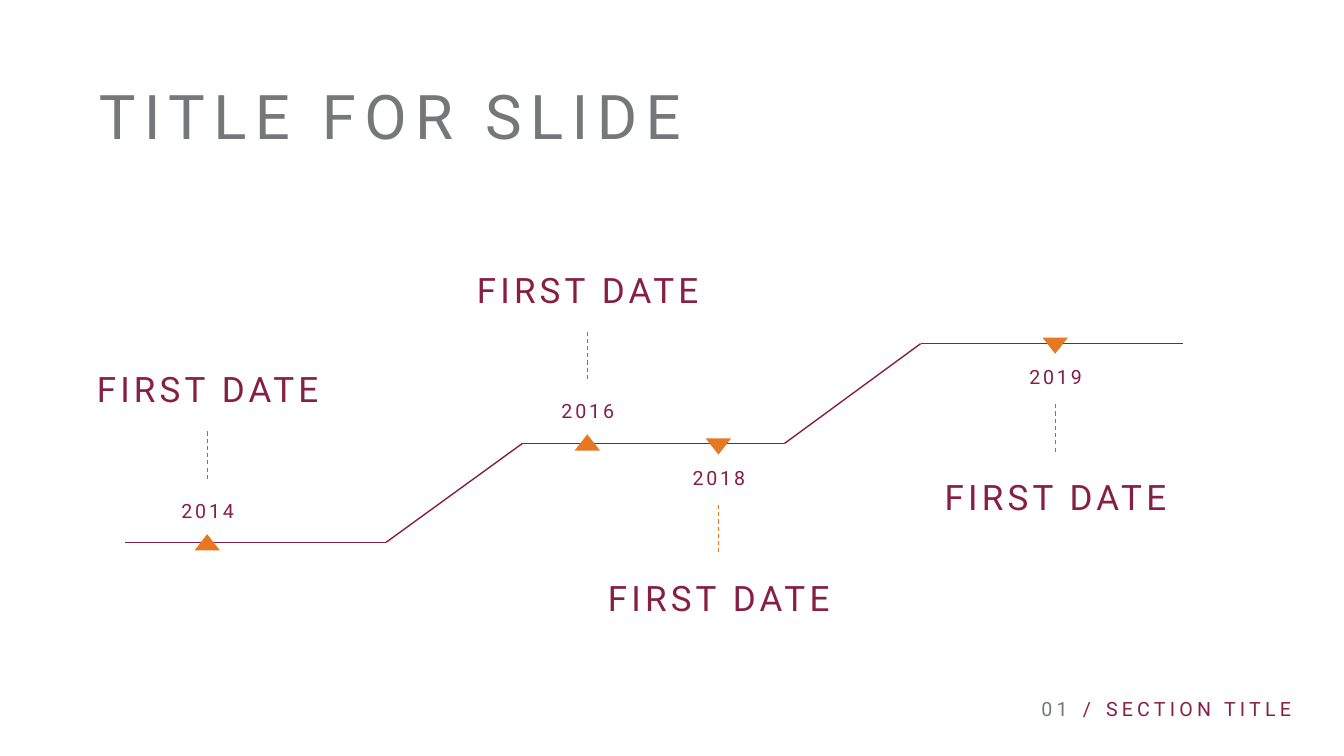
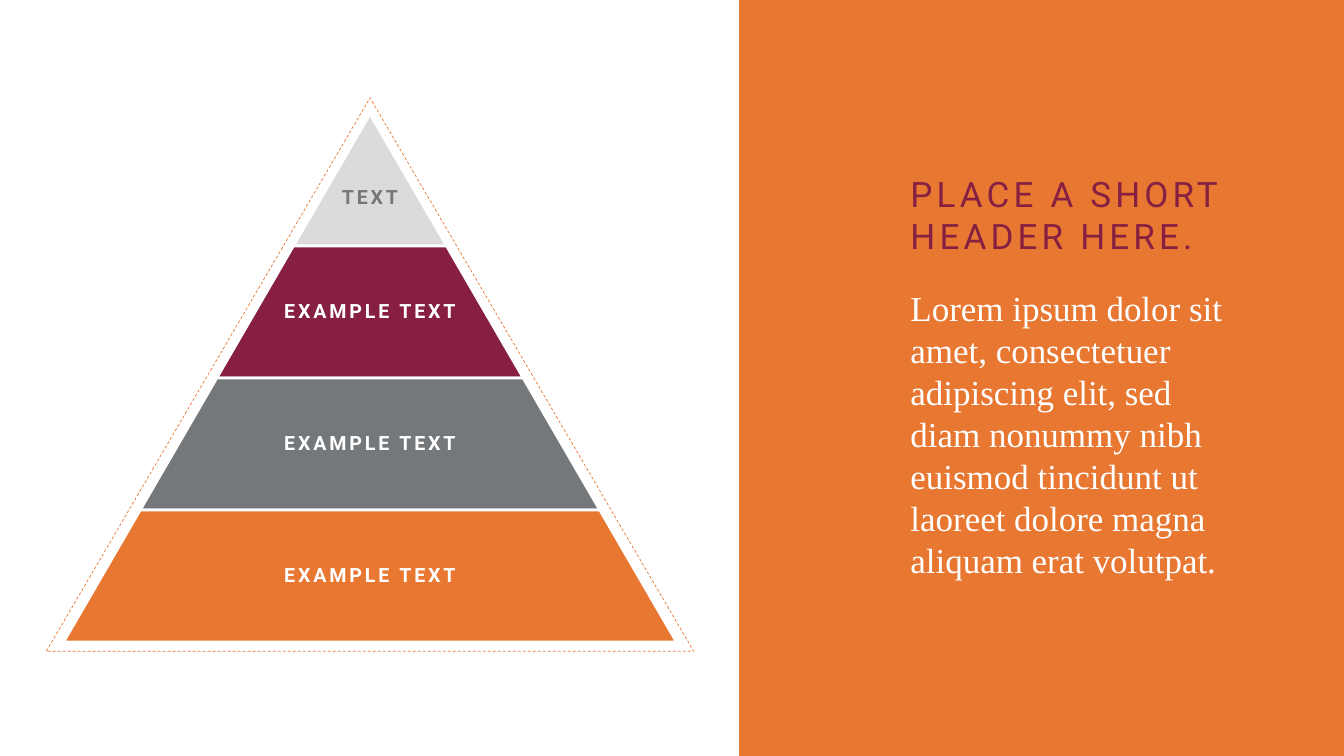
import dataclasses
import itertools

import pptx
import pptx.dml.color
import pptx.enum.dml
import pptx.enum.shapes
import pptx.enum.text
import pptx.oxml.ns
import pptx.util
from lxml import etree

Inches = pptx.util.Inches
Shape = pptx.enum.shapes.MSO_SHAPE
Align = pptx.enum.text.PP_ALIGN
Anchor = pptx.enum.text.MSO_ANCHOR


@dataclasses.dataclass(frozen=True)
class Theme:
    maroon: str = "861F41"
    grey: str = "75787B"
    marker: str = "E87722"
    orange: str = "E87731"
    pale: str = "DBDBDB"
    white: str = "FFFFFF"
    sans: str = "Roboto"
    serif: str = "Times New Roman"
    title: int = 44
    heading: int = 25
    small: int = 14


THEME = Theme()

TIMELINE_TITLE = "TITLE FOR SLIDE"
ROUTE = [(1.24, 5.38), (3.83, 5.38), (5.18, 4.4), (7.78, 4.4), (9.13, 3.41), (11.73, 3.41)]
# year, label, marker centre, marker top, points up, dash colour
MILESTONES = [
    ("2014", "FIRST DATE", 2.06, 5.3, True, THEME.grey),
    ("2016", "FIRST DATE", 5.83, 4.31, True, THEME.grey),
    ("2018", "FIRST DATE", 7.13, 4.35, False, THEME.marker),
    ("2019", "FIRST DATE", 10.47, 3.35, False, THEME.grey),
]
# Distances from the marker top: year, dash start, label
OFFSETS = {True: (-0.4, -1.02, -1.7), False: (0.22, 0.66, 1.32)}
DASH_LENGTH = 0.5
# text, left, width, alignment, colour, letter spacing
FOOTER = [
    ("01", 9.86, 0.78, Align.RIGHT, THEME.grey, 3),
    ("/", 10.6, 0.27, Align.RIGHT, THEME.maroon, 2),
    ("SECTION TITLE", 10.92, 2.3, Align.LEFT, THEME.maroon, 3),
]

# text, fill, text colour, shift of the text down
TIERS = [
    ("TEXT", THEME.pale, THEME.grey, 0.18),
    ("EXAMPLE TEXT", THEME.maroon, THEME.white, 0),
    ("EXAMPLE TEXT", THEME.grey, THEME.white, 0),
    ("EXAMPLE TEXT", THEME.orange, THEME.white, 0),
]
PYRAMID_CENTRE, PYRAMID_TOP = 3.67, 1.13
TIER_HEIGHT, TIER_STEP = 1.31, 1.52
PANEL_HEADER = "PLACE A SHORT HEADER HERE."
PANEL_TEXT = (
    "Lorem ipsum dolor sit amet, consectetuer adipiscing elit, sed diam nonummy nibh "
    "euismod tincidunt ut laoreet dolore magna aliquam erat volutpat."
)


def rgb(colour):
    return pptx.dml.color.RGBColor.from_string(colour)


def write(box, text, size=THEME.small, colour=THEME.maroon, font=THEME.sans, bold=False,
          spacing=0, align=Align.LEFT, anchor=Anchor.TOP, line_spacing=1.0, inset=0.05):
    frame = box.text_frame
    frame.word_wrap = True
    frame.auto_size = pptx.enum.text.MSO_AUTO_SIZE.NONE
    frame.vertical_anchor = anchor
    frame.margin_left = frame.margin_right = Inches(inset)
    frame.margin_top = frame.margin_bottom = Inches(inset)
    para = frame.paragraphs[0]
    para.alignment = align
    para.line_spacing = line_spacing
    span = para.add_run()
    span.text = text
    span.font.size = pptx.util.Pt(size)
    span.font.name = font
    span.font.bold = bold
    span.font.color.rgb = rgb(colour)
    if spacing:
        span._r.get_or_add_rPr().set("spc", str(spacing * 100))


def add_text(page, place, text, **formats):
    write(page.shapes.add_textbox(*map(Inches, place)), text, **formats)


def set_title(page, place, text, **formats):
    """Fill the title placeholder and bring it in front of the other shapes."""
    title = page.shapes.title
    title.left, title.top, title.width, title.height = map(Inches, place)
    write(title, text, **formats)
    title.element.getparent().append(title.element)


def style_line(line, colour, width, dashed=False):
    line.color.rgb = rgb(colour)
    line.width = pptx.util.Pt(width)
    if dashed:
        line.dash_style = pptx.enum.dml.MSO_LINE.DASH


def add_shape(page, kind, place, fill=None):
    shape = page.shapes.add_shape(kind, *map(Inches, place))
    shape.shadow.inherit = False
    shape.line.fill.background()
    if fill:
        shape.fill.solid()
        shape.fill.fore_color.rgb = rgb(fill)
    else:
        shape.fill.background()
    return shape


def add_line(page, start, end, colour, width, dashed=False):
    line = page.shapes.add_connector(
        pptx.enum.shapes.MSO_CONNECTOR.STRAIGHT, *map(Inches, (*start, *end)))
    style_line(line.line, colour, width, dashed)
    etree.SubElement(line.element.spPr, pptx.oxml.ns.qn("a:effectLst"))


def add_milestone(page, year, label, centre, top, points_up, dash_colour):
    year_offset, dash_offset, label_offset = OFFSETS[points_up]
    marker = add_shape(page, Shape.ISOSCELES_TRIANGLE,
                       (centre - 0.13, top, 0.25, 0.16), THEME.marker)
    marker.rotation = 0 if points_up else 180
    dash_top = top + dash_offset
    add_line(page, (centre, dash_top), (centre, dash_top + DASH_LENGTH),
             dash_colour, 0.75, dashed=True)
    add_text(page, (centre - 0.45, top + year_offset, 0.9, 0.34), year,
             spacing=2, align=Align.CENTER)
    add_text(page, (centre - 1.82, top + label_offset, 3.64, 0.52), label,
             size=THEME.heading, spacing=3, align=Align.CENTER)


def build_timeline(page):
    for start, end in itertools.pairwise(ROUTE):
        add_line(page, start, end, THEME.maroon, 1)
    for milestone in MILESTONES:
        add_milestone(page, *milestone)
    for text, left, width, align, colour, spacing in FOOTER:
        add_text(page, (left, 6.75, width, 0.45), text, colour=colour, spacing=spacing,
                 align=align, anchor=Anchor.BOTTOM, line_spacing=0.9)
    set_title(page, (0.93, 0.84, 8.01, 0.73), TIMELINE_TITLE, size=THEME.title,
              colour=THEME.grey, spacing=6, anchor=Anchor.BOTTOM, line_spacing=0.9)


def build_pyramid(page):
    add_shape(page, Shape.RECTANGLE, (7.33, 0, 6, 7.5), THEME.orange)
    for row, (text, fill, colour, shift) in enumerate(TIERS):
        top = PYRAMID_TOP + row * TIER_HEIGHT
        width = TIER_STEP * (row + 1)
        tier = add_shape(page, Shape.TRAPEZOID,
                         (PYRAMID_CENTRE - width / 2, top, width, TIER_HEIGHT), fill)
        tier.adjustments[0] = TIER_STEP / 2 / TIER_HEIGHT
        style_line(tier.line, THEME.white, 2)
        add_text(page, (PYRAMID_CENTRE - 1, top + shift, 2, TIER_HEIGHT), text,
                 colour=colour, bold=True, spacing=2, align=Align.CENTER,
                 anchor=Anchor.MIDDLE, line_spacing=0.9, inset=0.02)
    outline = add_shape(page, Shape.ISOSCELES_TRIANGLE, (0.46, 0.97, 6.42, 5.49))
    style_line(outline.line, THEME.orange, 0.5, dashed=True)
    add_text(page, (8.98, 2.79, 3.22, 3.05), PANEL_TEXT, size=THEME.heading,
             colour=THEME.white, font=THEME.serif)
    set_title(page, (8.98, 1.66, 4.2, 0.94), PANEL_HEADER, size=THEME.heading, spacing=3)


def main():
    deck = pptx.Presentation()
    deck.slide_width, deck.slide_height = Inches(13.33), Inches(7.5)
    title_only = deck.slide_layouts[5]
    for build in (build_timeline, build_pyramid):
        build(deck.slides.add_slide(title_only))
    deck.save("out.pptx")


if __name__ == "__main__":
    main()
